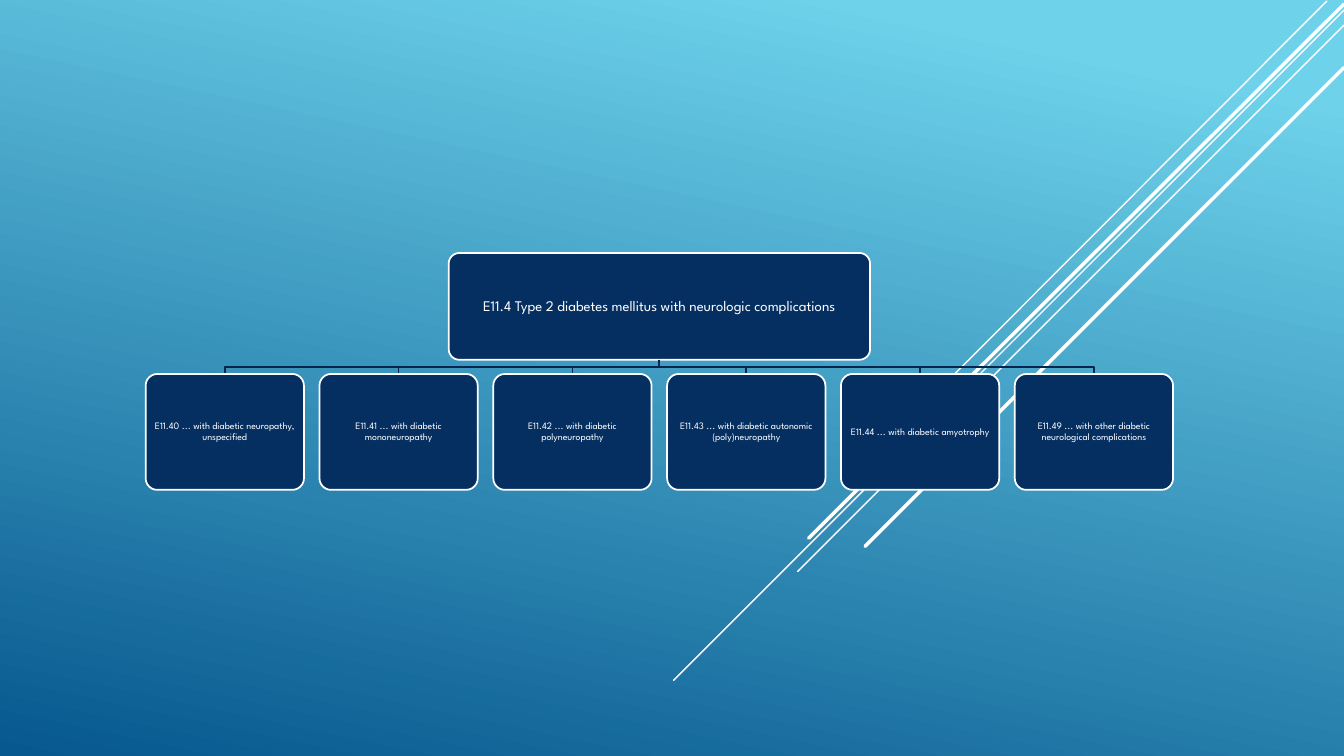
from lxml.etree import SubElement
from pptx import Presentation
from pptx.dml.color import RGBColor
from pptx.enum.shapes import MSO_CONNECTOR as Connector, MSO_SHAPE as Shape
from pptx.enum.text import MSO_ANCHOR as Anchor, PP_ALIGN as Align
from pptx.oxml.ns import qn
from pptx.util import Inches, Pt

COLOURS = {
    "sky": "6ED2EB",
    "ocean": "06588E",
    "navy": "052F61",
    "branch": "04264E",
    "white": "FFFFFF",
}
FONT = "League Spartan"

# (start x, start y), (end x, end y), width in points
STREAKS = [
    ((13.16, 0.01), (9, 4.18), 1),
    ((13.33, 0.1), (6.68, 6.75), 1),
    ((13.33, 0.25), (7.91, 5.67), 1),
    ((13.33, 0.04), (8.02, 5.34), 2.5),
    ((13.33, 0.67), (8.58, 5.42), 2.5),
]

ROOT = "E11.4 Type 2 diabetes mellitus with neurologic complications"
CODES = [
    "E11.40 ... with diabetic neuropathy, unspecified",
    "E11.41 ... with diabetic mononeuropathy",
    "E11.42 ... with diabetic polyneuropathy",
    "E11.43 ... with diabetic autonomic (poly)neuropathy",
    "E11.44 ... with diabetic amyotrophy",
    "E11.49 ... with other diabetic neurological complications",
]

ROOT_WIDTH, ROOT_HEIGHT, ROOT_TOP = 4.18, 1.06, 2.51
CODE_WIDTH, CODE_HEIGHT, CODE_TOP = 1.57, 1.15, 3.71
CENTRE = 6.54
PITCH = 1.724


def colour(name):
    return RGBColor.from_string(COLOURS[name])


def apply_format(target, values):
    for name, value in values.items():
        setattr(target, name, value)


class CodeTreeSlide:
    def __init__(self, presentation):
        self.slide = presentation.slides.add_slide(presentation.slide_layouts[6])
        self.shapes = self.slide.shapes

    def gradient_background(self):
        fill = self.slide.background.fill
        fill.gradient()
        fill.gradient_angle = 258
        for stop, (position, name) in zip(
            fill.gradient_stops, [(0.1, "sky"), (1, "ocean")]
        ):
            stop.position = position
            stop.color.rgb = colour(name)

    def outline(self, shape, name, width):
        shape.line.color.rgb = colour(name)
        shape.line.width = Pt(width)

    def streak(self, start, end, width):
        connector = self.shapes.add_connector(
            Connector.STRAIGHT, *(Inches(value) for value in start + end)
        )
        self.outline(connector, "white", width)
        properties = connector.element.spPr
        properties.find(qn("a:ln")).set("cap", "rnd")
        SubElement(properties, qn("a:effectLst"))

    def branch(self, x):
        """Draw the elbow from the root box down to the code box centred on x."""
        top = ROOT_TOP + ROOT_HEIGHT
        middle = (top + CODE_TOP) / 2
        points = [(CENTRE, middle), (x, middle), (x, CODE_TOP)]
        builder = self.shapes.build_freeform(Inches(CENTRE), Inches(top))
        builder.add_line_segments(
            [(Inches(px), Inches(py)) for px, py in points], close=False
        )
        shape = builder.convert_to_shape()
        shape.shadow.inherit = False
        shape.fill.background()
        self.outline(shape, "branch", 1.25)

    def box(self, text, x, top, width, height, size, inset):
        """Draw a rounded box centred on x with its text inside."""
        shape = self.shapes.add_shape(
            Shape.ROUNDED_RECTANGLE,
            Inches(x - width / 2), Inches(top), Inches(width), Inches(height),
        )
        shape.adjustments[0] = 0.1
        shape.shadow.inherit = False
        shape.fill.solid()
        shape.fill.fore_color.rgb = colour("navy")
        self.outline(shape, "white", 1.25)

        frame = shape.text_frame
        margins = {f"margin_{side}": Inches(inset)
                   for side in ("left", "top", "right", "bottom")}
        apply_format(frame, {"word_wrap": True, "vertical_anchor": Anchor.MIDDLE,
                             **margins})
        paragraph = frame.paragraphs[0]
        apply_format(paragraph, {"alignment": Align.CENTER, "line_spacing": 0.9})
        run = paragraph.add_run()
        run.text = text
        apply_format(run.font, {"name": FONT, "size": Pt(size)})
        run.font.color.rgb = colour("white")


def main():
    presentation = Presentation()
    presentation.slide_width = Inches(13.33)
    presentation.slide_height = Inches(7.5)

    tree = CodeTreeSlide(presentation)
    tree.gradient_background()
    for start, end, width in STREAKS:
        tree.streak(start, end, width)

    tree.box(ROOT, CENTRE, ROOT_TOP, ROOT_WIDTH, ROOT_HEIGHT, 10.5, 0.05)
    for index, code in enumerate(CODES):
        x = CENTRE + (index - (len(CODES) - 1) / 2) * PITCH
        tree.branch(x)
        tree.box(code, x, CODE_TOP, CODE_WIDTH, CODE_HEIGHT, 7, 0.03)

    presentation.save("out.pptx")


if __name__ == "__main__":
    main()
